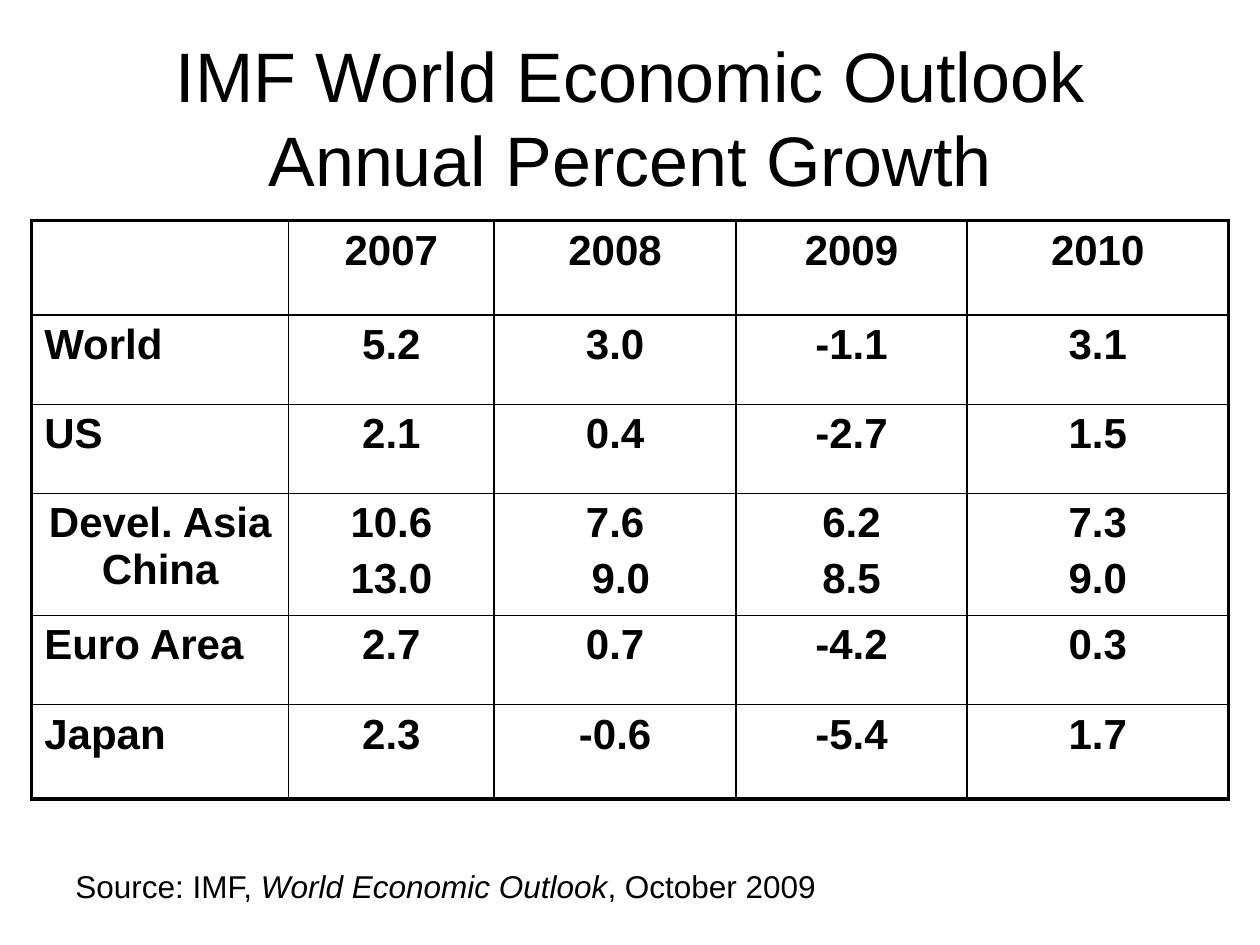
from lxml.etree import SubElement
from pptx import Presentation
from pptx.dml.color import RGBColor
from pptx.enum.text import MSO_ANCHOR, PP_ALIGN
from pptx.oxml.ns import qn
from pptx.util import Cm, Pt

COLORS = {"ink": "000000", "paper": "FFFFFF"}
COLUMN_WIDTHS = [5.18, 4.14, 4.88, 4.65, 5.28]
ROW_HEIGHTS = [1.9, 1.8, 1.8, 1.9, 1.8, 1.9]
GROWTH = [
    ["", "2007", "2008", "2009", "2010"],
    ["World", "5.2", "3.0", "-1.1", "3.1"],
    ["US", "2.1", "0.4", "-2.7", "1.5"],
    ["Devel. Asia China", "10.6\n13.0", "7.6\n 9.0", "6.2\n8.5", "7.3\n9.0"],
    ["Euro Area", "2.7", "0.7", "-4.2", "0.3"],
    ["Japan", "2.3", "-0.6", "-5.4", "1.7"],
]


def write(para, text, size=18, bold=False, italic=False, align=PP_ALIGN.LEFT):
    para.alignment = align
    for index, line in enumerate(text.split("\v")):
        if index:
            para.add_line_break()
        span = para.add_run()
        span.text = line
        font = span.font
        font.name, font.size = "Arial", Pt(size)
        font.bold, font.italic = bold, italic
        font.color.rgb = RGBColor.from_string(COLORS["ink"])


class SlideBuilder:
    thin, thick = 1, 2.25

    def __init__(self, page):
        self.page = page
        fill = page.background.fill
        fill.solid()
        fill.fore_color.rgb = RGBColor.from_string(COLORS["paper"])

    def text(self, left, top, width, height, anchor=MSO_ANCHOR.TOP):
        box = self.page.shapes.add_textbox(Cm(left), Cm(top), Cm(width), Cm(height))
        box.text_frame.word_wrap = True
        box.text_frame.vertical_anchor = anchor
        return box.text_frame.paragraphs[0]

    def border(self, cell, side, width):
        line = SubElement(cell._tc.get_or_add_tcPr(), qn(f"a:ln{side}"), w=str(Pt(width)))
        fill = SubElement(line, qn("a:solidFill"))
        SubElement(fill, qn("a:srgbClr"), val=COLORS["ink"])

    def cell(self, cell, text, outer_sides, align):
        for side in "LRTB":
            self.border(cell, side, self.thick if side in outer_sides else self.thin)
        cell.fill.background()
        for index, line in enumerate(text.split("\n")):
            frame = cell.text_frame
            para = frame.add_paragraph() if index else frame.paragraphs[0]
            write(para, line, size=24, bold=True, align=align)
            spacing = SubElement(para._p.get_or_add_pPr(), qn("a:spcBef"))
            SubElement(spacing, qn("a:spcPct"), val="20000")

    def table(self, left, top, widths, heights, values):
        table = self.page.shapes.add_table(
            len(heights), len(widths), Cm(left), Cm(top), Cm(sum(widths)), Cm(sum(heights))
        ).table
        table.first_row = table.horz_banding = False
        for column, width in zip(table.columns, widths):
            column.width = Cm(width)
        last_row, last_column = len(heights) - 1, len(widths) - 1
        for r, row in enumerate(values):
            table.rows[r].height = Cm(heights[r])
            for c, text in enumerate(row):
                edges = {"L": c == 0, "R": c == last_column, "T": r == 0, "B": r == last_row}
                outer_sides = [side for side, is_outer in edges.items() if is_outer]
                centred = c > 0 or text.startswith("Devel.")
                align = PP_ALIGN.CENTER if centred else PP_ALIGN.LEFT
                self.cell(table.cell(r, c), text, outer_sides, align)


def main():
    deck = Presentation()
    deck.slide_width, deck.slide_height = Cm(25.4), Cm(19.05)
    builder = SlideBuilder(deck.slides.add_slide(deck.slide_layouts[6]))

    title = builder.text(1.27, 0.76, 22.86, 3.18, anchor=MSO_ANCHOR.MIDDLE)
    write(title, "IMF World Economic Outlook\vAnnual Percent Growth", size=40, align=PP_ALIGN.CENTER)

    builder.table(0.64, 4.45, COLUMN_WIDTHS, ROW_HEIGHTS, GROWTH)

    source = builder.text(1.27, 17.35, 21.79, 1.02)
    write(source, "Source: IMF, ")
    write(source, "World Economic Outlook", italic=True)
    write(source, ", October 2009")

    deck.save("out.pptx")


if __name__ == "__main__":
    main()
